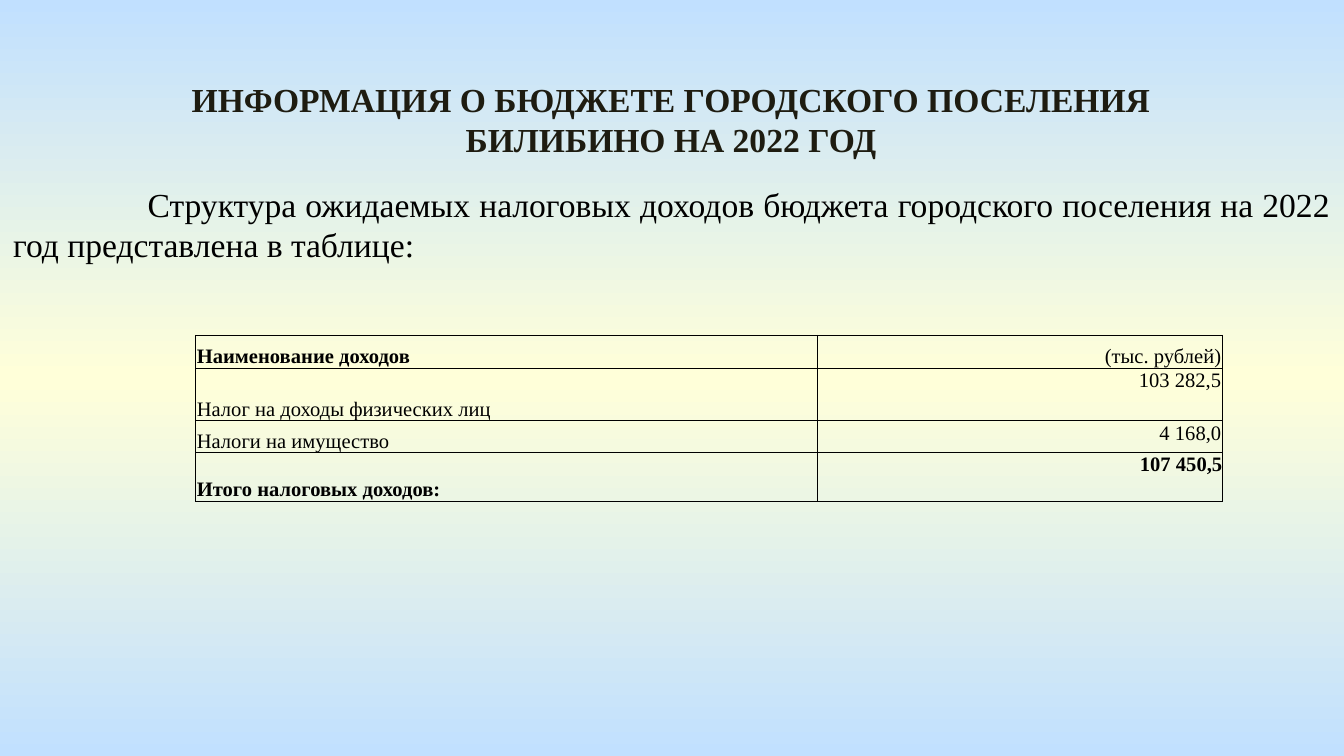
from copy import deepcopy

from lxml import etree
from pptx import Presentation
from pptx import util as u
from pptx.dml.color import RGBColor
from pptx.enum import text
from pptx.oxml import ns

COLORS = {"sky": "C1E0FF", "cream": "FFFFD9", "heading": "1E1C11", "body": "000000"}
ALIGN = text.PP_ALIGN


class BudgetSlide:
    font = "Times New Roman"

    def __init__(self, deck):
        self.slide = deck.slides.add_slide(deck.slide_layouts[6])

    def color(self, name):
        return RGBColor.from_string(COLORS[name])

    def background(self, *names):
        fill = self.slide.background.fill
        fill.gradient()
        fill.gradient_angle = 90
        stop_list = self.slide.element.find(".//" + ns.qn("a:gsLst"))
        stop_list.insert(1, deepcopy(stop_list[0]))
        for i, (stop, name) in enumerate(zip(fill.gradient_stops, names)):
            stop.position = i / (len(names) - 1)
            stop.color.rgb = self.color(name)

    def paragraph(self, paragraph, words, size, align, color="body", bold=False):
        paragraph.text = words
        paragraph.alignment = align
        paragraph.font.name = self.font
        paragraph.font.size = u.Pt(size)
        paragraph.font.bold = bold
        paragraph.font.color.rgb = self.color(color)

    def textbox(self, place, words, align, indent=0, **style):
        frame = self.slide.shapes.add_textbox(*map(u.Cm, place)).text_frame
        frame.word_wrap = True
        self.paragraph(frame.paragraphs[0], words, 18, align, **style)
        if indent:
            frame.paragraphs[0]._p.get_or_add_pPr().set("indent", str(u.Cm(indent)))

    def borders(self, cell):
        properties = cell._tc.get_or_add_tcPr()
        for side in ("lnL", "lnR", "lnT", "lnB"):
            line = etree.SubElement(properties, ns.qn(f"a:{side}"), w=str(u.Pt(0.5)))
            solid = etree.SubElement(line, ns.qn("a:solidFill"))
            etree.SubElement(solid, ns.qn("a:srgbClr"), val=COLORS["body"])

    def cell(self, cell, words, align, bold, anchor, margin):
        self.borders(cell)
        cell.fill.background()
        cell.margin_left = cell.margin_right = cell.margin_top = u.Cm(margin)
        cell.margin_bottom = 0
        cell.vertical_anchor = anchor
        self.paragraph(cell.text_frame.paragraphs[0], words, 11, align, bold=bold)

    def table(self, left, top, widths, heights, rows):
        grid = self.slide.shapes.add_table(
            len(rows), len(widths), u.Cm(left), u.Cm(top),
            u.Cm(sum(widths)), u.Cm(sum(heights))).table
        grid.first_row = grid.horz_banding = False
        for column, width in zip(grid.columns, widths):
            column.width = u.Cm(width)
        last = len(rows) - 1
        for i, (name, amount) in enumerate(rows):
            grid.rows[i].height = u.Cm(heights[i])
            anchor = text.MSO_ANCHOR.TOP if i else text.MSO_ANCHOR.BOTTOM
            self.cell(grid.cell(i, 0), name, ALIGN.JUSTIFY, i in (0, last),
                      text.MSO_ANCHOR.BOTTOM, 0.02)
            self.cell(grid.cell(i, 1), amount, ALIGN.RIGHT, i == last,
                      anchor, 0 if i == last else 0.02)


def main():
    deck = Presentation()
    deck.slide_width, deck.slide_height = u.Cm(25.4), u.Cm(14.29)
    budget = BudgetSlide(deck)
    budget.background("sky", "cream", "sky")
    budget.textbox(
        (2.87, 1.37, 19.63, 1.8),
        "ИНФОРМАЦИЯ О БЮДЖЕТЕ ГОРОДСКОГО ПОСЕЛЕНИЯ БИЛИБИНО НА 2022 ГОД",
        ALIGN.CENTER, color="heading", bold=True)
    budget.textbox(
        (0, 3.35, 25.4, 1.8),
        "Структура ожидаемых налоговых доходов бюджета городского поселения "
        "на 2022 год представлена в таблице:",
        ALIGN.JUSTIFY, indent=2.54)
    budget.table(3.7, 6.34, (11.75, 7.65), (0.62, 0.99, 0.61, 0.91), [
        ("Наименование доходов", "(тыс. рублей)"),
        ("Налог на доходы физических лиц", "103 282,5"),
        ("Налоги на имущество", "4 168,0"),
        ("Итого налоговых доходов:", "107 450,5"),
    ])
    deck.save("out.pptx")


if __name__ == "__main__":
    main()
